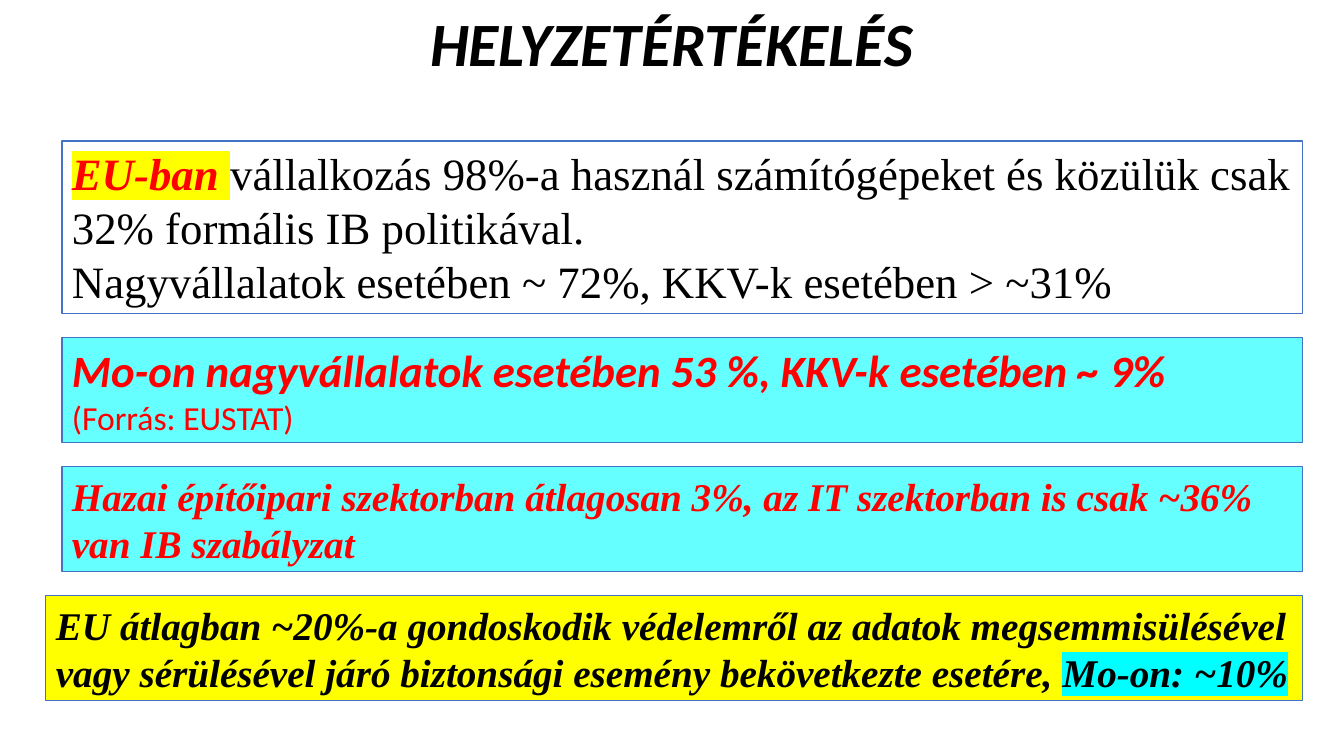
"""Build the HELYZETÉRTÉKELÉS slide on information security policy figures."""
from dataclasses import dataclass

from lxml import etree
from pptx import Presentation
from pptx.dml.color import RGBColor
from pptx.enum import shapes, text
from pptx.oxml import ns
from pptx import util as u


@dataclass(frozen=True)
class Theme:
    black: str = "000000"
    red: str = "FF0000"
    yellow: str = "FFFF00"
    aqua: str = "66FFFF"
    cyan: str = "00FFFF"
    border: str = "4472C4"
    sans: str = "Calibri"
    serif: str = "Times New Roman"
    heading: int = 44
    large: int = 32
    medium: int = 28
    small: int = 24


theme = Theme()
SCALE = 12192000 / 1344


def px(*lengths):
    return [u.Emu(round(length * SCALE)) for length in lengths]


def add_run(paragraph, words, size, face, color, strong=True, marker=None):
    run = paragraph.add_run()
    run.text = words
    run.font.size = u.Pt(size)
    run.font.name = face
    run.font.bold = run.font.italic = strong
    run.font.color.rgb = RGBColor.from_string(color)
    if marker:
        highlight = etree.Element(ns.qn("a:highlight"))
        etree.SubElement(highlight, ns.qn("a:srgbClr"), val=marker)
        run.font.fill._xPr.find(ns.qn("a:solidFill")).addnext(highlight)


deck = Presentation()
deck.slide_width, deck.slide_height = px(1344, 756)
slide = deck.slides.add_slide(deck.slide_layouts[6])

heading = slide.shapes.add_textbox(*px(288, 0, 768, 85)).text_frame
heading.word_wrap = True
heading.paragraphs[0].alignment = text.PP_ALIGN.CENTER
add_run(heading.paragraphs[0], "HELYZETÉRTÉKELÉS", theme.heading, theme.sans, theme.black)

eu_style = (theme.large, theme.serif, theme.black, False)
average_style = (theme.medium, theme.serif, theme.black, True)

# Each statement: left, height, fill, then paragraphs of lines of runs.
statements = [
    (62, 173, None, [
        [[("EU-ban", theme.large, theme.serif, theme.red, True, theme.yellow),
          (" ", *eu_style, theme.yellow),
          ("vállalkozás 98%-a használ számítógépeket és közülük csak "
           "32% formális IB politikával.", *eu_style)]],
        [[("Nagyvállalatok esetében ~ 72%, KKV-k esetében > ~31%", *eu_style)]],
    ]),
    (62, 105, theme.aqua, [
        [[("Mo-on nagyvállalatok esetében 53 %, KKV-k esetében ~ 9%",
           theme.large, theme.sans, theme.red)],
         [("(Forrás: EUSTAT)", theme.small, theme.sans, theme.red, False)]],
    ]),
    (62, 105, theme.aqua, [
        [[("Hazai építőipari szektorban átlagosan 3%, az IT szektorban is csak ~36% "
           "van IB szabályzat", theme.medium, theme.serif, theme.red)]],
    ]),
    (46, 105, theme.yellow, [
        [[("EU átlagban ~20%-a gondoskodik védelemről az adatok megsemmisülésével "
           "vagy sérülésével járó biztonsági esemény bekövetkezte esetére, ", *average_style),
          ("Mo-on: ~10%", *average_style, theme.cyan)]],
    ]),
]

RIGHT, GAP = 1303, 24
top = 141
for left, height, fill, paragraphs in statements:
    statement = slide.shapes.add_shape(
        shapes.MSO_SHAPE.RECTANGLE, *px(left, top, RIGHT - left, height))
    statement.shadow.inherit = False
    statement.line.color.rgb = RGBColor.from_string(theme.border)
    statement.line.width = u.Pt(0.75)
    if fill:
        statement.fill.solid()
        statement.fill.fore_color.rgb = RGBColor.from_string(fill)
    else:
        statement.fill.background()
    frame = statement.text_frame
    frame.word_wrap = True
    frame.vertical_anchor = text.MSO_ANCHOR.TOP
    for index, lines in enumerate(paragraphs):
        paragraph = frame.add_paragraph() if index else frame.paragraphs[0]
        paragraph.alignment = text.PP_ALIGN.LEFT
        for number, line in enumerate(lines):
            if number:
                paragraph.add_line_break()
            for run in line:
                add_run(paragraph, *run)
    top += height + GAP

deck.save("out.pptx")
